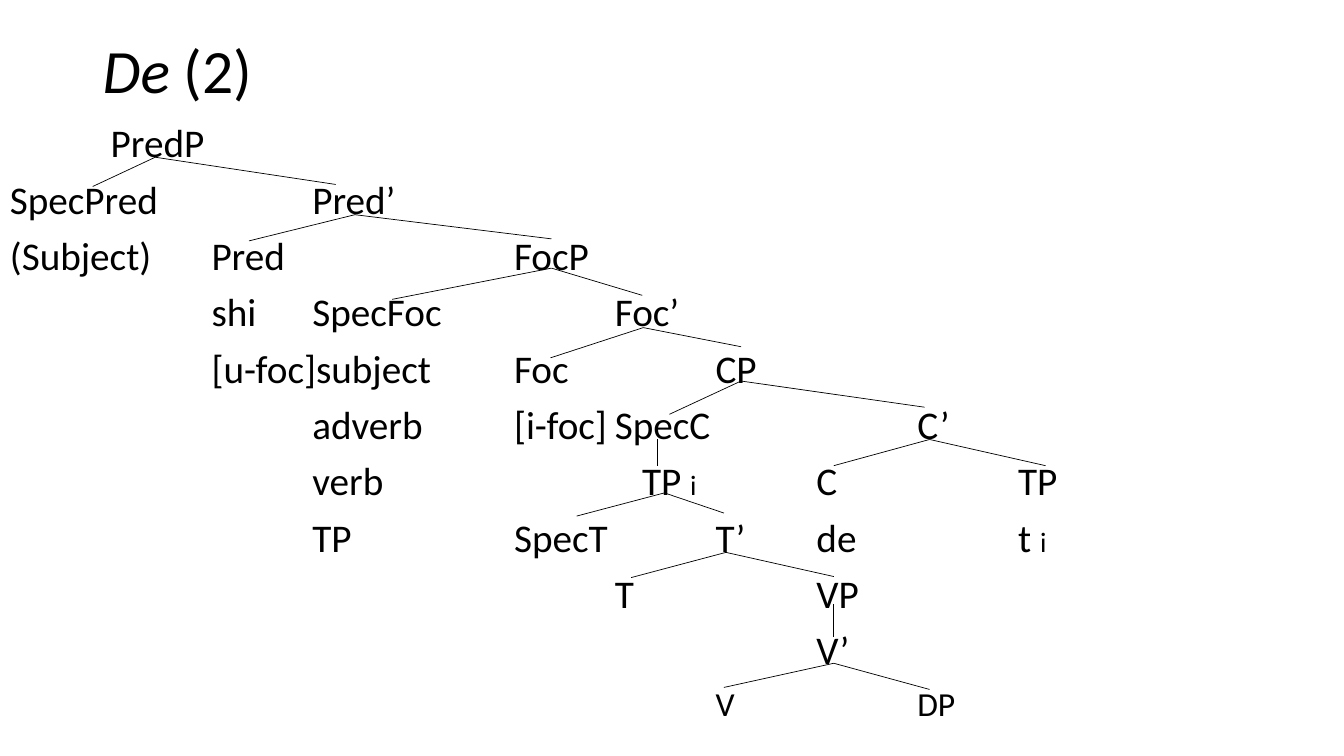
import pptx
import pptx.dml.color
import pptx.enum.shapes
import pptx.enum.text
import pptx.util
from lxml import etree
from pptx.oxml.ns import qn

Inches, Pt = pptx.util.Inches, pptx.util.Pt
COLORS = {"ink": "000000", "paper": "FFFFFF"}
FONT = "Calibri"
COLUMN = 1.0  # inches between tab columns
INDEX_SIZE = 20

# Each row of the tree: text size, then (column, label, index) for each node.
ROWS = [
    (28, [(1, "PredP", "")]),
    (28, [(0, "SpecPred", ""), (3, "Pred’", "")]),
    (28, [(0, "(Subject)", ""), (2, "Pred", ""), (5, "FocP", "")]),
    (28, [(2, "shi", ""), (3, "SpecFoc", ""), (6, "Foc’", "")]),
    (28, [(2, "[u-foc]subject", ""), (5, "Foc", ""), (7, "CP", "")]),
    (28, [(3, "adverb", ""), (5, "[i-foc]", ""), (6, "SpecC", ""), (9, "C’", "")]),
    (28, [(3, "verb", ""), (6.27, "TP ", "i"), (8, "C", ""), (10, "TP", "")]),
    (28, [(3, "TP", ""), (5, "SpecT", ""), (7, "T’", ""), (8, "de", ""), (10, "t ", "i")]),
    (28, [(6, "T", ""), (8, "VP", "")]),
    (28, [(8, "V’", "")]),
    (24, [(7, "V", ""), (9, "DP", "")]),
]

# Each apex (column, depth in inches) with the ends of its branches.
BRANCHES = [
    ((1.54, 0.38), [(0.92, 0.67), (3.33, 0.65)]),
    ((3.52, 0.95), [(2.47, 1.21), (5.47, 1.19)]),
    ((5.47, 1.48), [(3.89, 1.79), (6.37, 1.75)]),
    ((6.38, 2.07), [(5.46, 2.37), (7.35, 2.26)]),
    ((7.35, 2.6), [(6.64, 2.93), (9.17, 2.86)]),
    ((9.22, 3.18), [(8.27, 3.44), (10.37, 3.44)]),
    ((6.52, 3.18), [(6.52, 3.44)]),
    ((6.59, 3.71), [(5.72, 3.94), (7.18, 3.91)]),
    ((7.2, 4.3), [(6.26, 4.55), (8.27, 4.54)]),
    ((8.27, 4.81), [(8.27, 5.14)]),
    ((8.27, 5.4), [(7.18, 5.64), (9.22, 5.66)]),
]


def ink(name):
    return pptx.dml.color.RGBColor.from_string(COLORS[name])


def add_text_frame(slide, box, anchor):
    frame = slide.shapes.add_textbox(*map(Inches, box)).text_frame
    frame.word_wrap = True
    frame.vertical_anchor = anchor
    return frame


def style_paragraph(paragraph, size):
    paragraph.line_spacing = 0.9
    paragraph.font.name = FONT
    paragraph.font.size = Pt(size)
    paragraph.font.color.rgb = ink("ink")


def set_tab_stops(paragraph, columns):
    tab_list = etree.SubElement(paragraph._p.get_or_add_pPr(), qn("a:tabLst"))
    for column in columns:
        etree.SubElement(tab_list, qn("a:tab"), pos=str(Inches(column * COLUMN)), algn="l")


def add_title(slide, box):
    frame = add_text_frame(slide, box, pptx.enum.text.MSO_ANCHOR.MIDDLE)
    heading = frame.paragraphs[0]
    style_paragraph(heading, 44)
    particle = heading.add_run()
    particle.text = "De "
    particle.font.italic = True
    heading.add_run().text = "(2)"


def add_nodes(slide, box):
    frame = add_text_frame(slide, box, pptx.enum.text.MSO_ANCHOR.TOP)
    for number, (size, nodes) in enumerate(ROWS):
        row = frame.add_paragraph() if number else frame.paragraphs[0]
        set_tab_stops(row, [column for column, _, _ in nodes if column])
        style_paragraph(row, size)
        row.space_before = Pt(10)
        for column, label, index in nodes:
            row.add_run().text = ("\t" if column else "") + label
            if index:
                subscript = row.add_run()
                subscript.text = index
                subscript.font.size = Pt(INDEX_SIZE)


def add_branches(slide, box):
    left, top = box[:2]

    def place(point):
        return Inches(left + point[0] * COLUMN), Inches(top + point[1])

    for apex, ends in BRANCHES:
        for end in ends:
            branch = slide.shapes.add_connector(
                pptx.enum.shapes.MSO_CONNECTOR.STRAIGHT, *place(apex), *place(end))
            branch.line.color.rgb = ink("ink")
            branch.line.width = Pt(0.5)
            etree.SubElement(branch._element.spPr, qn("a:effectLst"))


def add_tree_slide(deck):
    slide = deck.slides.add_slide(deck.slide_layouts[6])
    slide.background.fill.solid()
    slide.background.fill.fore_color.rgb = ink("paper")
    add_title(slide, (0.92, 0, 11.5, 1.45))
    tree_box = (0, 1.18, 13.33, 6.32)
    add_nodes(slide, tree_box)
    add_branches(slide, tree_box)


def main():
    deck = pptx.Presentation()
    deck.slide_width, deck.slide_height = Inches(13.33), Inches(7.5)
    add_tree_slide(deck)
    deck.save("out.pptx")


if __name__ == "__main__":
    main()
